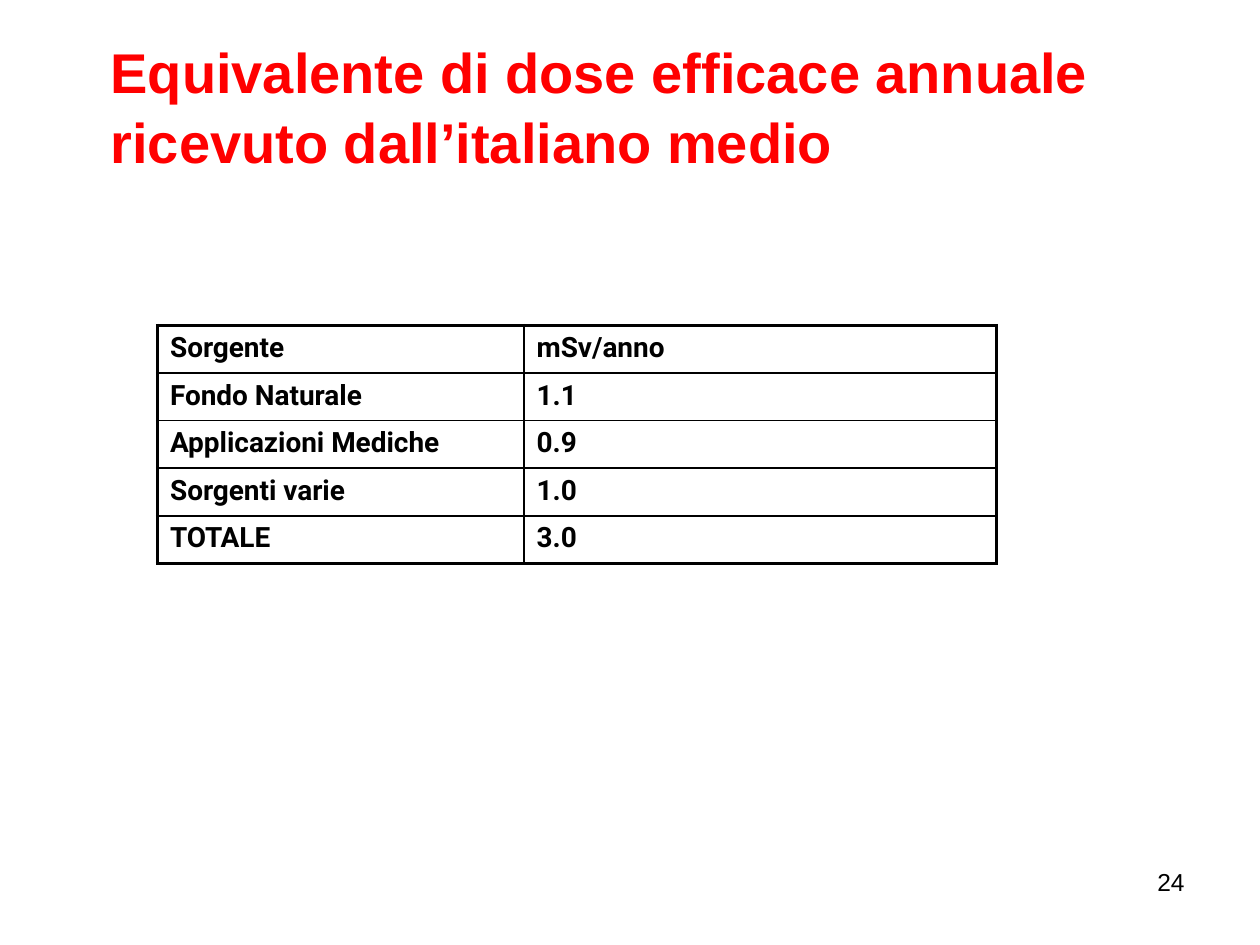
from dataclasses import dataclass

from lxml import etree
from pptx import Presentation
from pptx.dml.color import RGBColor
from pptx.enum.text import MSO_ANCHOR, MSO_AUTO_SIZE, PP_ALIGN
from pptx.oxml.ns import qn
from pptx.util import Pt

TOP, LEFT, RIGHT = MSO_ANCHOR.TOP, PP_ALIGN.LEFT, PP_ALIGN.RIGHT
NO_FIT = MSO_AUTO_SIZE.NONE
TITLE_ONLY = 5


@dataclass(frozen=True)
class Theme:
    title_color: str = "FF0000"
    ink: str = "000000"
    title_font: str = "Arial"
    table_font: str = "Roboto"
    title_size: float = 32
    table_size: float = 16
    number_size: float = 14
    outer_border: float = 2.25
    inner_border: float = 1


THEME = Theme()
DOSES = [
    ("Sorgente", "mSv/anno"),
    ("Fondo Naturale", "1.1"),
    ("Applicazioni Mediche", "0.9"),
    ("Sorgenti varie", "1.0"),
    ("TOTALE", "3.0"),
]


def write(frame, text, font, size, color, bold=False, align=LEFT):
    frame.text = text
    frame.word_wrap = True
    para = frame.paragraphs[0]
    para.alignment = align
    span = para.runs[0].font
    span.name, span.size, span.bold = font, Pt(size), bold
    span.color.rgb = RGBColor.from_string(color)
    return para


def add_title(page, box, text):
    title = page.shapes.title
    title.left, title.top, title.width, title.height = map(Pt, box)
    frame = title.text_frame
    frame.auto_size = NO_FIT
    frame.vertical_anchor = TOP
    para = write(frame, text, THEME.title_font, THEME.title_size,
                 THEME.title_color, bold=True)
    para.space_before = Pt(3)
    para.line_spacing = 1.04


def set_borders(cell, widths):
    """Draw the cell's left, right, top and bottom lines, in that order."""
    properties = cell._tc.get_or_add_tcPr()
    for index, (side, width) in enumerate(zip("LRTB", widths)):
        line = etree.Element(qn(f"a:ln{side}"), w=str(Pt(width)))
        fill = etree.SubElement(line, qn("a:solidFill"))
        etree.SubElement(fill, qn("a:srgbClr"), val=THEME.ink)
        properties.insert(index, line)


def add_dose_table(page, box, rows, column_widths):
    left, top, width, height = map(Pt, box)
    table = page.shapes.add_table(
        len(rows), len(column_widths), left, top, width, height).table
    table.first_row = table.horz_banding = False
    for column, column_width in zip(table.columns, column_widths):
        column.width = Pt(column_width)
    last_row, last_column = len(rows) - 1, len(column_widths) - 1
    for r, values in enumerate(rows):
        for c, value in enumerate(values):
            cell = table.cell(r, c)
            cell.fill.background()
            write(cell.text_frame, value, THEME.table_font, THEME.table_size,
                  THEME.ink, bold=True)
            on_edge = (c == 0, c == last_column, r == 0, r == last_row)
            set_borders(cell, [THEME.outer_border if edge else THEME.inner_border
                               for edge in on_edge])


def add_page_number(page, box, number):
    frame = page.shapes.add_textbox(*map(Pt, box)).text_frame
    write(frame, number, THEME.title_font, THEME.number_size, THEME.ink, align=RIGHT)


def main():
    deck = Presentation()
    deck.slide_width, deck.slide_height = Pt(720), Pt(540)
    page = deck.slides.add_slide(deck.slide_layouts[TITLE_ONLY])
    add_page_number(page, (516, 492, 168, 37.5), "24")
    add_dose_table(page, (90, 186, 479.5, 136), DOSES, (209.5, 270))
    add_title(page, (56, 16.5, 584, 85),
              "Equivalente di dose efficace annuale ricevuto dall’italiano medio")
    deck.save("out.pptx")


if __name__ == "__main__":
    main()
